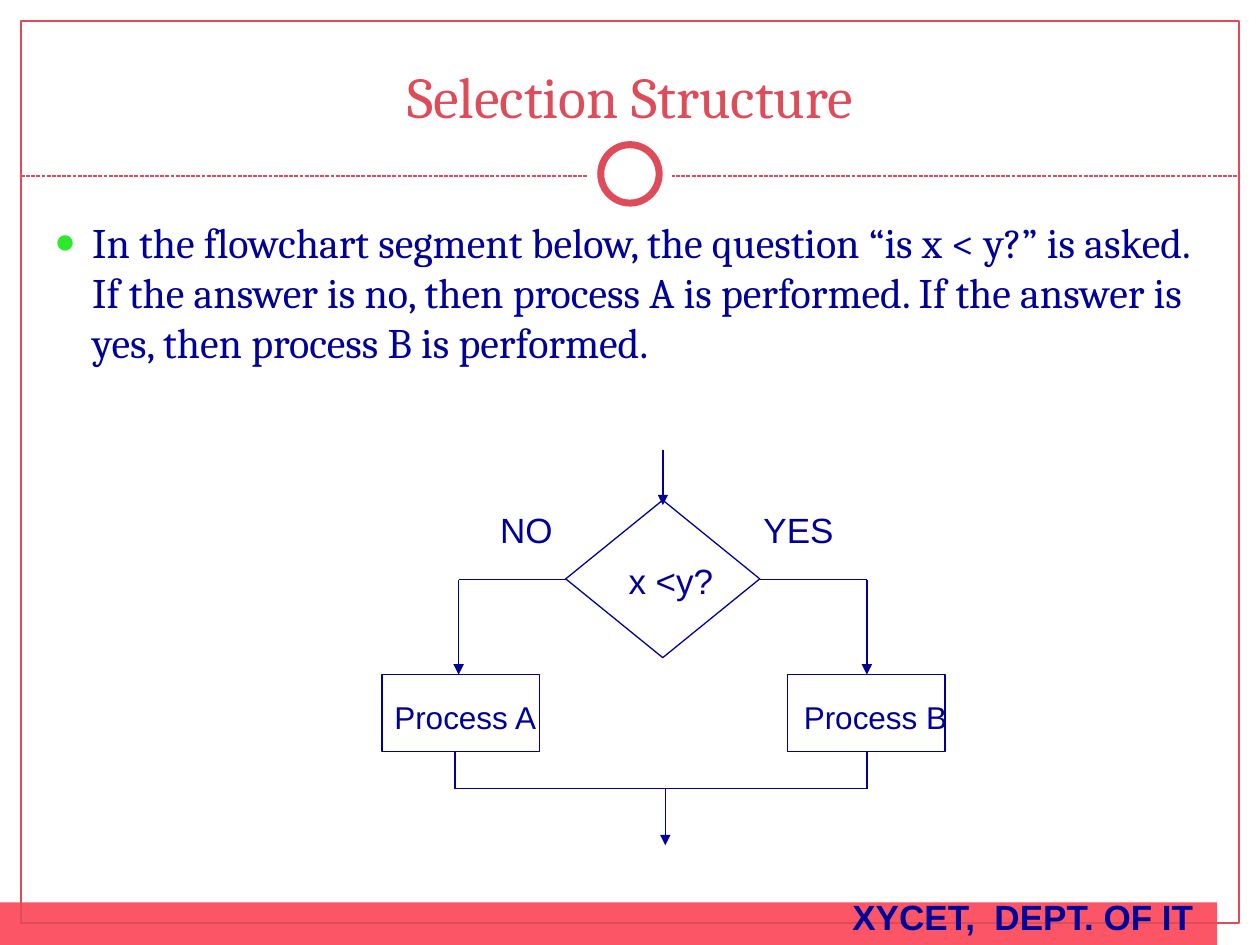
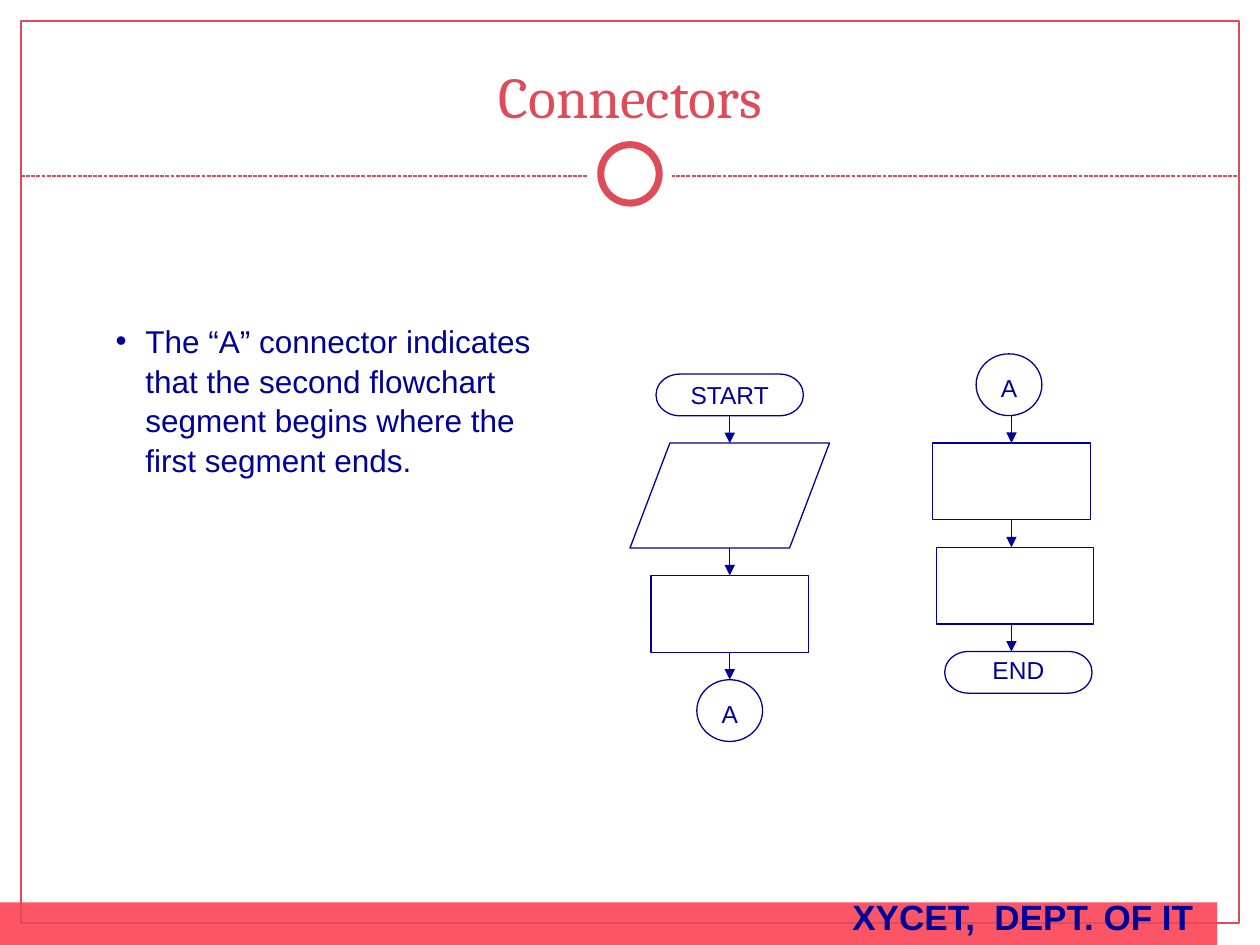
from collections import namedtuple

from lxml import etree
from pptx import Presentation
from pptx.dml.color import RGBColor
from pptx.enum.dml import MSO_LINE
from pptx.enum.shapes import MSO_CONNECTOR, MSO_SHAPE
from pptx.enum.text import MSO_ANCHOR, PP_ALIGN
from pptx.oxml.ns import qn
from pptx.util import Pt

WHITE = RGBColor(0xFF, 0xFF, 0xFF)
RED = RGBColor(0xDE, 0x4C, 0x5A)
BAND = RGBColor(0xFC, 0x56, 0x66)
NAVY = RGBColor(0x00, 0x00, 0x99)
GREEN = RGBColor(0x2E, 0xE8, 0x2E)

RECTANGLE = MSO_SHAPE.RECTANGLE
OVAL = MSO_SHAPE.OVAL
DECISION = MSO_SHAPE.FLOWCHART_DECISION
TERMINATOR = MSO_SHAPE.FLOWCHART_TERMINATOR
DATA = MSO_SHAPE.FLOWCHART_DATA
JUNCTION = MSO_SHAPE.FLOWCHART_CONNECTOR
STRAIGHT = MSO_CONNECTOR.STRAIGHT
DASH = MSO_LINE.SQUARE_DOT
LEFT = PP_ALIGN.LEFT
CENTER = PP_ALIGN.CENTER
TOP = MSO_ANCHOR.TOP
BOTTOM = MSO_ANCHOR.BOTTOM

BODY_FONT = "Arial"
TITLE_FONT = "Cambria"

Box = namedtuple("Box", "left top width height")
Step = namedtuple("Step", "kind width height shift text drop", defaults=(0, "", 0))

PAGE = Box(0, 0, 720, 540)
TITLE = Box(24, 18, 672, 60)


def within(box, left, top, width, height):
    return Box(box.left + left, box.top + top, width, height)


def add_outline(page, kind, box, fill=None, line=NAVY, weight=0.75):
    shape = page.shapes.add_shape(kind, *map(Pt, box))
    shape.shadow.inherit = False
    if fill is None:
        shape.fill.background()
    else:
        shape.fill.solid()
        shape.fill.fore_color.rgb = fill
    if line is None:
        shape.line.fill.background()
    else:
        shape.line.color.rgb = line
        shape.line.width = Pt(weight)
    return shape


def add_line(page, start, end, arrow=False, color=NAVY):
    line = page.shapes.add_connector(STRAIGHT, *map(Pt, (*start, *end)))
    line.line.color.rgb = color
    line.line.width = Pt(0.75)
    if arrow:
        etree.SubElement(line.line._get_or_add_ln(), qn("a:tailEnd"), type="triangle")
    etree.SubElement(line._element.spPr, qn("a:effectLst"))
    return line


def add_text(page, box, text, size, font=BODY_FONT, color=NAVY, align=LEFT,
             bold=False, anchor=TOP, inset=7.2):
    frame = page.shapes.add_textbox(*map(Pt, box)).text_frame
    frame.word_wrap = True
    frame.vertical_anchor = anchor
    frame.margin_left = frame.margin_right = Pt(inset)
    para = frame.paragraphs[0]
    para.text = text
    para.alignment = align
    para.font.size = Pt(size)
    para.font.name = font
    para.font.bold = bold
    para.font.color.rgb = color
    return para


def add_bullet(para, symbol, indent, color=NAVY, percent=100):
    props = para._p.get_or_add_pPr()
    props.set("marL", str(Pt(indent)))
    props.set("indent", str(-Pt(indent)))
    tint = etree.SubElement(props, qn("a:buClr"))
    etree.SubElement(tint, qn("a:srgbClr"), val=str(color))
    etree.SubElement(props, qn("a:buSzPct"), val=str(percent * 1000))
    etree.SubElement(props, qn("a:buFont"), typeface=BODY_FONT)
    etree.SubElement(props, qn("a:buChar"), char=symbol)
    defaults = props.find(qn("a:defRPr"))
    if defaults is not None:
        props.append(defaults)


def add_theme(page, box, title):
    add_outline(page, RECTANGLE, within(box, 0, 515.7, 695.5, 24.3), BAND, None)
    add_outline(page, RECTANGLE, within(box, 12, 12, 696, 515.5), line=RED)
    rule_y = box.top + 100.6
    rule = add_line(page, (box.left + 12, rule_y), (box.left + 708, rule_y), color=RED)
    rule.line.dash_style = DASH
    for diameter, line in ((48, None), (33.4, RED)):
        ring = within(box, 360 - diameter / 2, 99.4 - diameter / 2, diameter, diameter)
        add_outline(page, OVAL, ring, WHITE, line, 4)
    add_text(page, within(box, 480, 508.3, 240, 31.7), "XYCET,  DEPT. OF IT", 20, bold=True)
    add_text(page, TITLE, title, 33, TITLE_FONT, RED, CENTER, anchor=BOTTOM)


def add_selection_chart(page, box):
    left_x, middle_x, right_x = 43.9, 160.6, 277.2
    branch_y, process_y, foot_y, merge_y = 74.2, 128.5, 172.8, 193.7
    add_outline(page, DECISION, within(box, 105.1, 28.8, 110.9, 90))
    for left in (0, 231.8):
        add_outline(page, RECTANGLE, within(box, left, process_y, 90, 44))

    lines = (
        ((105.5, branch_y), (left_x, branch_y), False),
        ((left_x, branch_y), (left_x, process_y), True),
        ((right_x, branch_y), (215.5, branch_y), False),
        ((right_x, branch_y), (right_x, process_y), True),
        ((41.8, foot_y), (41.8, merge_y), False),
        ((right_x, foot_y), (right_x, merge_y), False),
        ((right_x, merge_y), (41.8, merge_y), False),
        ((162, merge_y), (162, box.height), True),
        ((middle_x, 0), (middle_x, 31.7), True),
    )
    for start, end, arrow in lines:
        add_line(page, (box.left + start[0], box.top + start[1]),
                 (box.left + end[0], box.top + end[1]), arrow)

    labels = (
        ("YES", 208.1, 30.2, 60, 20, CENTER),
        ("NO", 52.6, 30.2, 60, 20, CENTER),
        ("x <y?", 133.9, 59, 67.7, 20, LEFT),
        ("Process B", 234, 138.2, 112, 18, LEFT),
        ("Process A", 0, 138.2, 106, 18, LEFT),
    )
    for text, left, top, width, size, align in labels:
        add_text(page, within(box, left, top, width, 31), text, size, align=align)


def add_flow_column(page, box, steps, gap=15.6):
    center = box.left + box.width / 2
    top = box.top
    for index, step in enumerate(steps):
        if index:
            add_line(page, (center, top - gap), (center, top), True)
        left = center + step.shift - step.width / 2
        add_outline(page, step.kind, Box(left, top, step.width, step.height))
        if step.text:
            label = Box(left, top + step.drop, step.width, 24)
            add_text(page, label, step.text, 14, align=CENTER, inset=0)
        top += step.height + gap


def build_selection_slide(page):
    add_theme(page, PAGE, "Selection Structure")
    para = add_text(
        page, Box(24, 120, 669.6, 360),
        "In the flowchart segment below, the question “is x < y?” is asked. "
        "If the answer is no, then process A is performed. "
        "If the answer is yes, then process B is performed.",
        24, TITLE_FONT)
    add_bullet(para, "●", 21.6, GREEN, 85)
    add_selection_chart(page, Box(218.2, 257, 346, 226))


def build_connectors_slide(page):
    add_theme(page, PAGE, "Connectors")
    process = Step(RECTANGLE, 90, 44)
    junction = Step(JUNCTION, 37.6, 35.3, 0, "A", 7.5)
    first = (Step(TERMINATOR, 84.2, 23.8, 0, "START"), Step(DATA, 114, 60),
             process, junction)
    second = (junction._replace(shift=-1.4), process, process._replace(shift=2),
              Step(TERMINATOR, 84.2, 23.8, 4, "END", -1.4))
    add_flow_column(page, Box(360, 213.8, 114, 210), first)
    add_flow_column(page, Box(533, 202.2, 90, 194), second)
    para = add_text(
        page, Box(59, 179.3, 274.3, 151),
        "The “A” connector indicates that the second flowchart segment "
        "begins where the first segment ends.", 18)
    para.line_spacing = 1.05
    add_bullet(para, "•", 17)


def main():
    deck = Presentation()
    deck.slide_width, deck.slide_height = Pt(PAGE.width), Pt(PAGE.height)
    blank = deck.slide_layouts[6]
    for build in (build_selection_slide, build_connectors_slide):
        build(deck.slides.add_slide(blank))
    deck.save("out.pptx")


if __name__ == "__main__":
    main()
